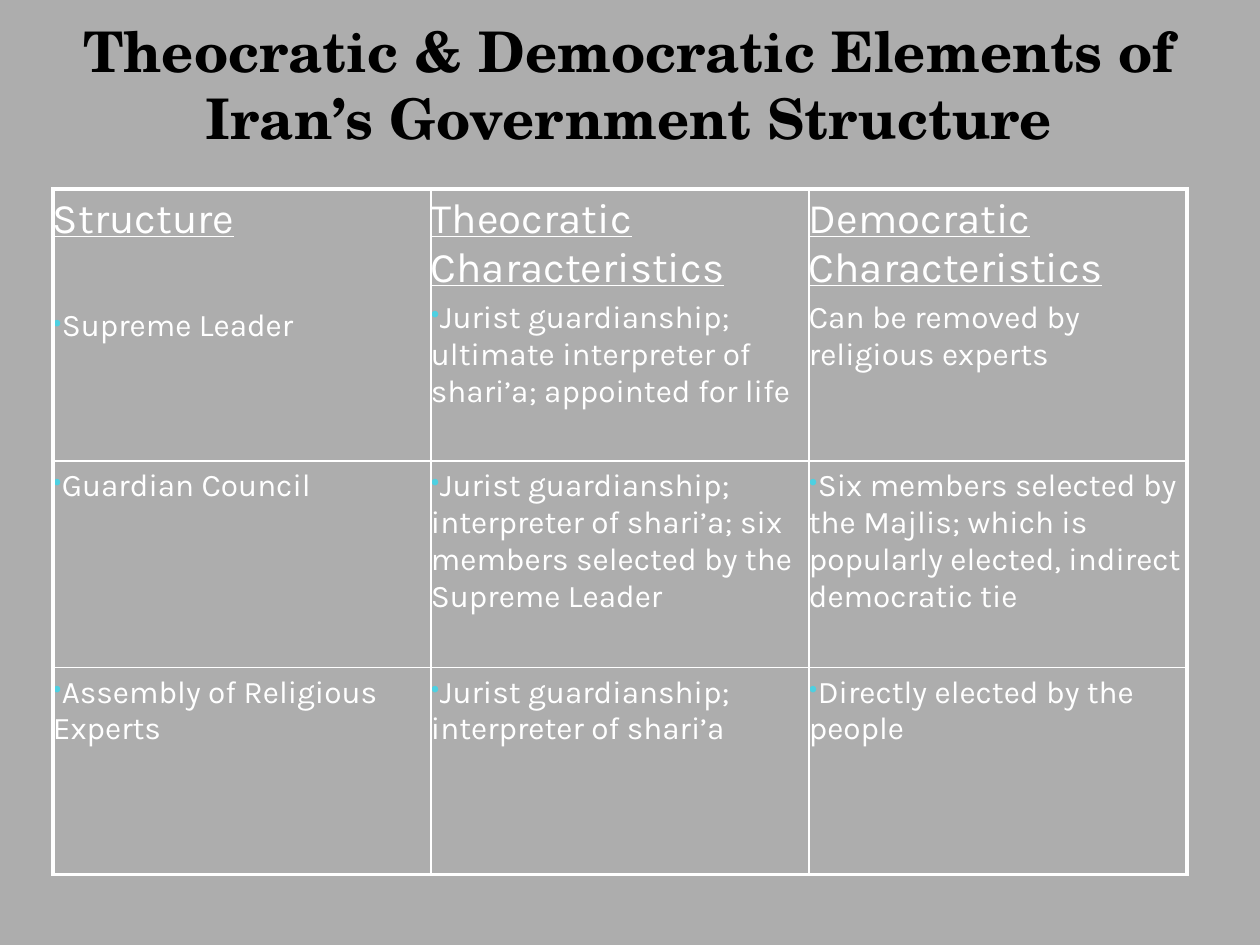
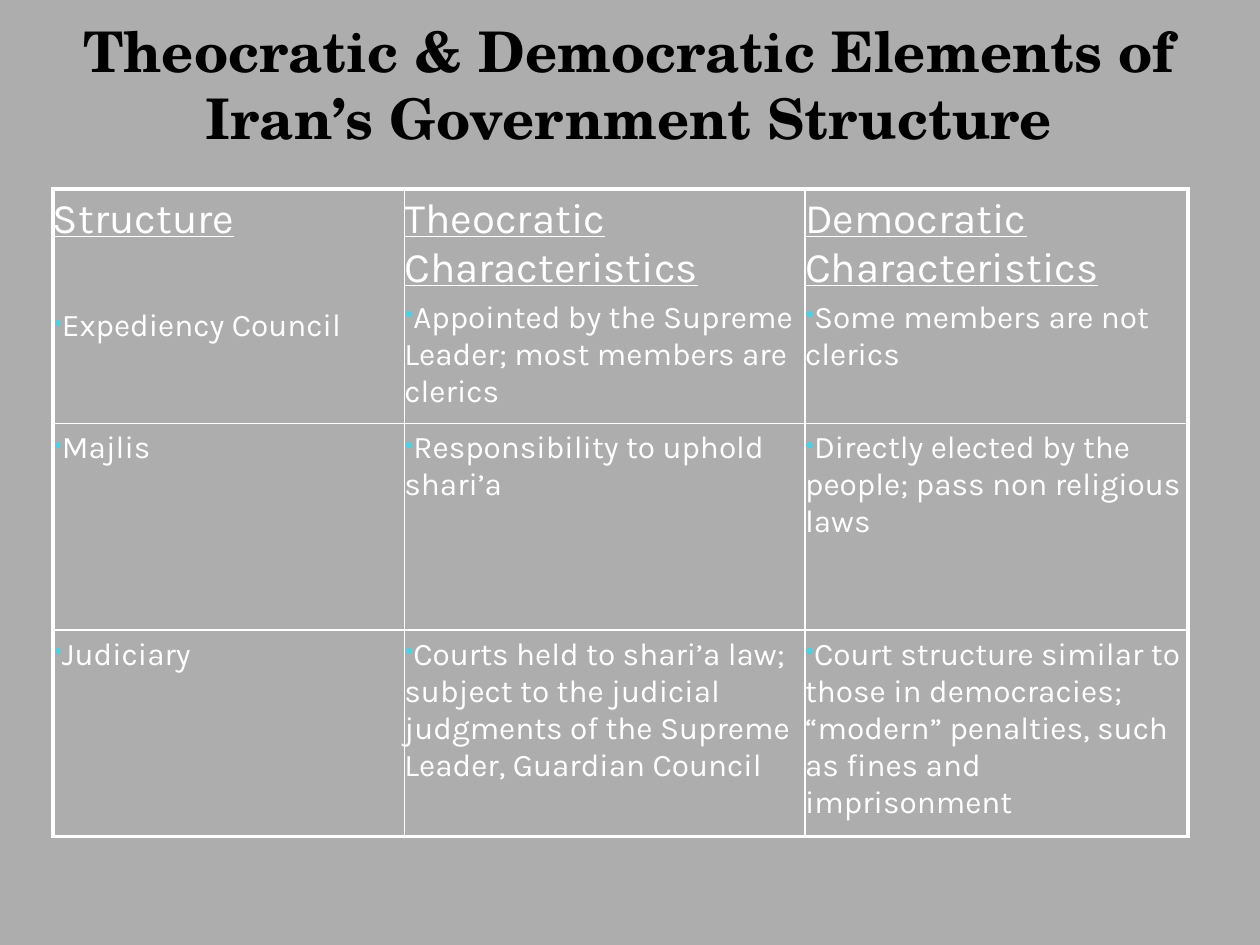
from lxml import etree
from pptx import Presentation
from pptx.dml.color import RGBColor
from pptx.enum.text import MSO_ANCHOR, MSO_AUTO_SIZE, PP_ALIGN
from pptx.oxml.ns import qn
from pptx.util import Emu, Inches, Pt

BOTTOM, TOP = MSO_ANCHOR.BOTTOM, MSO_ANCHOR.TOP
CENTER, LEFT = PP_ALIGN.CENTER, PP_ALIGN.LEFT
NO_FIT = MSO_AUTO_SIZE.NONE

COLORS = {"back": "ADADAD", "title": "000000", "text": "FFFFFF", "bullet": "4DD0E1"}
TITLE_FONT = {"name": "TeX Gyre Schola", "size": Pt(32), "bold": True}
HEAD_FONT = {"name": "Karla", "size": Pt(24), "underline": True, "bold": False}
BODY_FONT = {"name": "Karla", "size": Pt(18), "underline": False, "bold": False}
CELL_FORMAT = {"margin_left": 0, "margin_right": 0, "margin_top": Inches(0.05),
               "margin_bottom": Inches(0.05), "vertical_anchor": TOP}
OUTER, INNER = Pt(2.25), Pt(1)
HEAD_GAP, STRUCTURE_GAP = Pt(3.6), Pt(36.2)

TITLE = "Theocratic & Democratic Elements of Iran’s Government Structure"
HEADS = ["Structure", "Theocratic Characteristics", "Democratic Characteristics"]
UNBULLETED = {"Can be removed by religious experts"}
TITLE_BOX = (0.33, 0.25, 9.33, 1)
TABLE_ORIGIN = (0.42, 1.5)

SLIDES = [
    {"cols": [3, 3, 3], "rows": [2.16, 1.64, 1.64], "body": [
        ["Supreme Leader",
         "Jurist guardianship; ultimate interpreter of shari’a; appointed for life",
         "Can be removed by religious experts"],
        ["Guardian Council",
         "Jurist guardianship; interpreter of shari’a; six members selected by the "
         "Supreme Leader",
         "Six members selected by the Majlis; which is popularly elected, indirect "
         "democratic tie"],
        ["Assembly of Religious Experts",
         "Jurist guardianship; interpreter of shari’a",
         "Directly elected by the people"]]},
    {"cols": [2.79, 3.18, 3.04], "rows": [1.86, 1.64, 1.64], "body": [
        ["Expediency Council",
         "Appointed by the Supreme Leader; most members are clerics",
         "Some members are not clerics"],
        ["Majlis",
         "Responsibility to uphold shari’a",
         "Directly elected by the people; pass non religious laws"],
        ["Judiciary",
         "Courts held to shari’a law; subject to the judicial judgments of the "
         "Supreme Leader, Guardian Council",
         "Court structure similar to those in democracies; “modern” penalties, such "
         "as fines and imprisonment"]]},
]


def apply(obj, values):
    """Set attributes from a dict of format values."""
    for name, value in values.items():
        setattr(obj, name, value)


def write(p, text, font, color, align=LEFT):
    """Write one formatted run into a paragraph."""
    p.alignment = align
    r = p.add_run()
    r.text = text
    apply(r.font, font)
    r.font.color.rgb = RGBColor.from_string(COLORS[color])


def add_bullet(p):
    """Give a paragraph a small coloured bullet."""
    pPr = p._p.get_or_add_pPr()
    clr = etree.SubElement(pPr, qn("a:buClr"))
    etree.SubElement(clr, qn("a:srgbClr"), val=COLORS["bullet"])
    etree.SubElement(pPr, qn("a:buSzPct"), val="80000")
    etree.SubElement(pPr, qn("a:buChar"), char="•")


def set_borders(cell, outer):
    """Draw the cell's four edges, heavier where they are on the table's outside."""
    tcPr = cell._tc.get_or_add_tcPr()
    for side, is_outer in outer.items():
        ln = etree.SubElement(tcPr, qn(f"a:ln{side}"), w=str(OUTER if is_outer else INNER))
        fill = etree.SubElement(ln, qn("a:solidFill"))
        etree.SubElement(fill, qn("a:srgbClr"), val=COLORS["text"])


def add_title(slide, box):
    """Place and format the title placeholder."""
    sp = slide.shapes.title
    apply(sp, dict(zip(("left", "top", "width", "height"), map(Inches, box))))
    tf = sp.text_frame
    apply(tf, {"vertical_anchor": BOTTOM, "auto_size": NO_FIT, "word_wrap": True})
    write(tf.paragraphs[0], TITLE, TITLE_FONT, "title", CENTER)


def fill_cell(cell, row, col, text):
    """Write a cell's body text, under a column heading in the first row."""
    tf = cell.text_frame
    p = tf.paragraphs[0]
    if row == 0:
        write(p, HEADS[col], HEAD_FONT, "text")
        p = tf.add_paragraph()
        p.space_before = STRUCTURE_GAP if col == 0 else HEAD_GAP
    write(p, text, BODY_FONT, "text")
    if text not in UNBULLETED:
        add_bullet(p)


def add_structure_table(slide, origin, cols, rows, body):
    """Build the table of government bodies from column and row sizes."""
    left, top = map(Inches, origin)
    widths, heights = [Inches(c) for c in cols], [Inches(r) for r in rows]
    table = slide.shapes.add_table(len(rows), len(cols), left, top,
                                   Emu(sum(widths)), Emu(sum(heights))).table
    apply(table, {"first_row": False, "horz_banding": False})
    for column, width in zip(table.columns, widths):
        column.width = width
    for i, texts in enumerate(body):
        table.rows[i].height = heights[i]
        for j, text in enumerate(texts):
            cell = table.cell(i, j)
            apply(cell, CELL_FORMAT)
            set_borders(cell, {"L": j == 0, "R": j == len(cols) - 1,
                               "T": i == 0, "B": i == len(rows) - 1})
            cell.fill.background()
            fill_cell(cell, i, j, text)


def main():
    """Build and save the presentation."""
    prs = Presentation()
    prs.slide_width, prs.slide_height = Inches(10), Inches(7.5)
    back = prs.slide_master.background.fill
    back.solid()
    back.fore_color.rgb = RGBColor.from_string(COLORS["back"])
    for content in SLIDES:
        slide = prs.slides.add_slide(prs.slide_layouts.get_by_name("Title Only"))
        add_title(slide, TITLE_BOX)
        add_structure_table(slide, TABLE_ORIGIN, **content)
    prs.save("out.pptx")


if __name__ == "__main__":
    main()
